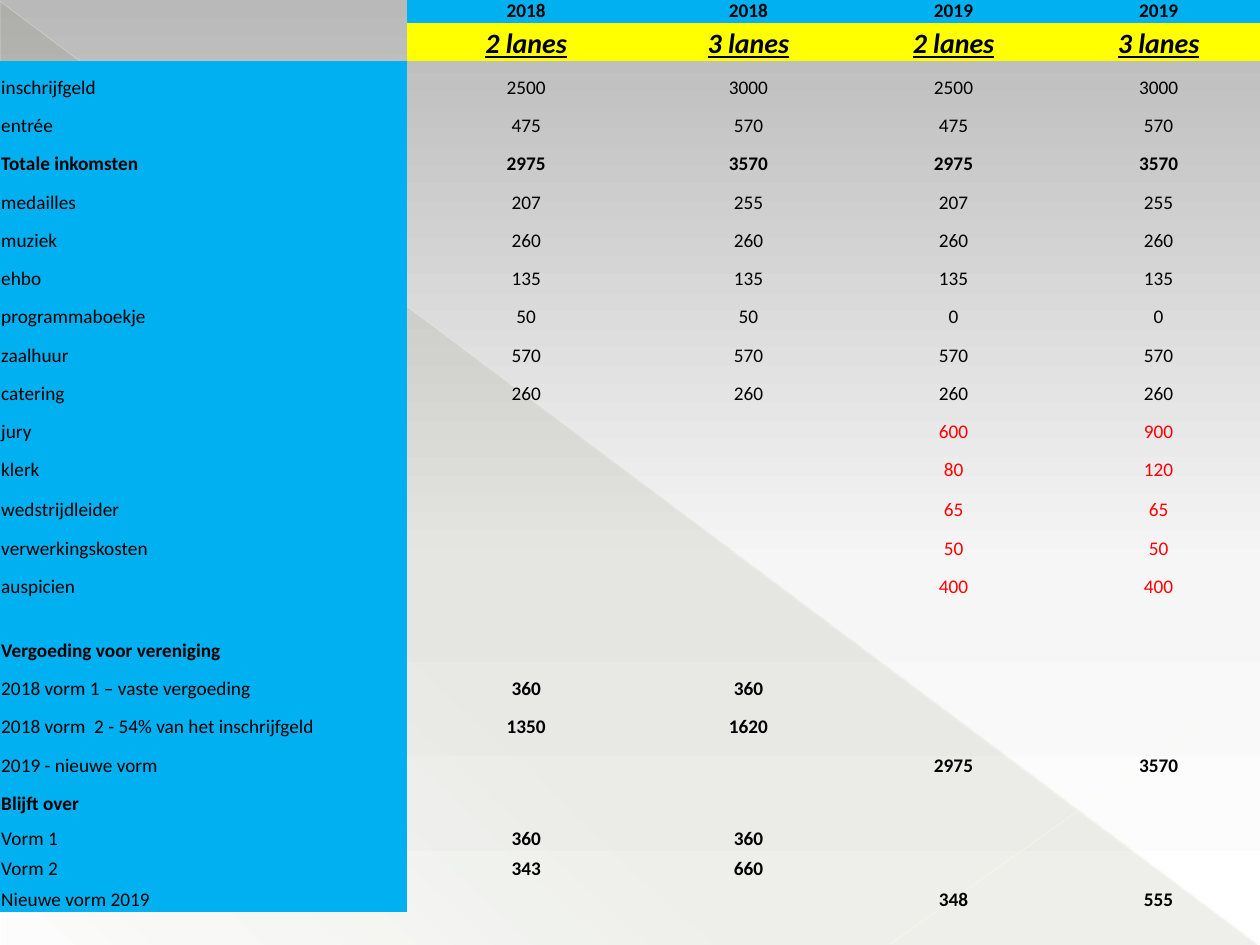
"""Build a one-slide budget table comparing 2018 and 2019 over two or three lanes."""
import pptx
import pptx.dml.color
import pptx.enum.shapes
import pptx.enum.text
import pptx.oxml.ns
import pptx.util
from lxml import etree

THEME = {
    "font": "Calibri", "body": 11, "lanes": 16,
    "text": "000000", "new": "FF0000", "label": "00B0F0", "highlight": "FFFF00",
    "background": [(0, "B9B9B9", 100), (60, "F6F6F6", 100), (100, "FFFFFF", 100)],
    "shade": [(0, "444D26", 10), (70, "444D26", 8), (100, "444D26", 1)],
    "no_grid": "{2D5ABB26-0587-4C30-8999-92F81FD0307C}",
}
STYLES = {
    "plain": {},
    "bold": {"bold": True},
    "new": {"color": THEME["new"]},
    "lanes": {"bold": True, "italic": True, "underline": True, "size": THEME["lanes"]},
}
HEADERS = [
    (["", "2018", "2018", "2019", "2019"], "bold", THEME["label"]),
    (["", "2 lanes", "3 lanes", "2 lanes", "3 lanes"], "lanes", THEME["highlight"]),
]
BODY = [
    ("inschrijfgeld", "plain", ["2500", "3000", "2500", "3000"], "plain"),
    ("entrée", "plain", ["475", "570", "475", "570"], "plain"),
    ("Totale inkomsten", "bold", ["2975", "3570", "2975", "3570"], "bold"),
    ("medailles", "plain", ["207", "255", "207", "255"], "plain"),
    ("muziek", "plain", ["260", "260", "260", "260"], "plain"),
    ("ehbo", "plain", ["135", "135", "135", "135"], "plain"),
    ("programmaboekje", "plain", ["50", "50", "0", "0"], "plain"),
    ("zaalhuur", "plain", ["570", "570", "570", "570"], "plain"),
    ("catering", "plain", ["260", "260", "260", "260"], "plain"),
    ("jury", "plain", ["", "", "600", "900"], "new"),
    ("klerk", "plain", ["", "", "80", "120"], "new"),
    ("wedstrijdleider", "plain", ["", "", "65", "65"], "new"),
    ("verwerkingskosten", "plain", ["", "", "50", "50"], "new"),
    ("auspicien", "plain", ["", "", "400", "400"], "new"),
    ("", "plain", ["", "", "", ""], "plain"),
    ("Vergoeding voor vereniging", "bold", ["", "", "", ""], "plain"),
    ("2018 vorm 1 – vaste vergoeding", "plain", ["360", "360", "", ""], "bold"),
    ("2018 vorm  2 - 54% van het inschrijfgeld", "plain", ["1350", "1620", "", ""], "bold"),
    ("2019 - nieuwe vorm", "plain", ["", "", "2975", "3570"], "bold"),
    ("Blijft over", "bold", ["", "", "", ""], "plain"),
    ("Vorm 1", "plain", ["360", "360", "", ""], "bold"),
    ("Vorm 2", "plain", ["343", "660", "", ""], "bold"),
    ("Nieuwe vorm 2019", "plain", ["", "", "348", "555"], "bold"),
]
COLUMN_WIDTHS = [232.3, 136.8, 117.2, 117.2, 117.2]
ROW_HEIGHT = 21.86
SPECIAL_HEIGHTS = {13: 22.86, 16: 14.76, 22: 20, 23: 17.2, 24: 17.7}
TABLE_TOP = -8.6
DIAGONALS = [
    ((0, 0.7), (719.3, 539.3), "FFFDE3", 0.39, 35),
    ((720, 389.5), (509, 539.3), "FFFDE6", 0.47, 45),
]

Pt = pptx.util.Pt
qn = pptx.oxml.ns.qn


def rgb(value):
    return pptx.dml.color.RGBColor.from_string(value)


def add_alpha(color_element, percent):
    etree.SubElement(color_element, qn("a:alpha"), val=str(percent * 1000))


def paint_gradient(fill, holder, stops, angle):
    fill.gradient()
    gradient = next(holder.iter(qn("a:gradFill")))
    stop_list = gradient.find(qn("a:gsLst"))
    for old_stop in list(stop_list):
        stop_list.remove(old_stop)
    for position, color, opacity in stops:
        stop = etree.SubElement(stop_list, qn("a:gs"), pos=str(position * 1000))
        color_element = etree.SubElement(stop, qn("a:srgbClr"), val=color)
        if opacity < 100:
            add_alpha(color_element, opacity)
    gradient.find(qn("a:lin")).set("ang", str(angle * 60000))


def write_text(cell, text, align="LEFT", size=THEME["body"], color=THEME["text"],
               bold=False, italic=False, underline=False):
    cell.margin_left = cell.margin_top = cell.margin_right = Pt(0.72)
    cell.margin_bottom = 0
    cell.vertical_anchor = pptx.enum.text.MSO_ANCHOR.BOTTOM
    para = cell.text_frame.paragraphs[0]
    para.alignment = getattr(pptx.enum.text.PP_ALIGN, align)
    if not text:
        etree.SubElement(para._p, qn("a:endParaRPr"), sz=str(size * 100))
        return
    span = para.add_run()
    span.text = text
    font = span.font
    font.name, font.size = THEME["font"], Pt(size)
    font.bold, font.italic, font.underline = bold, italic, underline
    font.color.rgb = rgb(color)


def fill_cell(cell, color):
    if color:
        cell.fill.solid()
        cell.fill.fore_color.rgb = rgb(color)
    else:
        cell.fill.background()


def add_backdrop(page):
    paint_gradient(page.background.fill, page.element, THEME["background"], 90)
    triangle = page.shapes.add_shape(
        pptx.enum.shapes.MSO_SHAPE.RIGHT_TRIANGLE, Pt(0.7), Pt(1.4), Pt(718.6), Pt(538.6))
    triangle.shadow.inherit = False
    triangle.line.fill.background()
    paint_gradient(triangle.fill, triangle.element, THEME["shade"], 133)
    for start, end, color, width, opacity in DIAGONALS:
        line = page.shapes.add_connector(
            pptx.enum.shapes.MSO_CONNECTOR.STRAIGHT, *map(Pt, start + end))
        line.line.width = Pt(width)
        line.line.color.rgb = rgb(color)
        add_alpha(next(line.element.iter(qn("a:srgbClr"))), opacity)
        etree.SubElement(line.element.spPr, qn("a:effectLst"))


def add_budget(page):
    row_count = len(HEADERS) + len(BODY)
    heights = [SPECIAL_HEIGHTS.get(index, ROW_HEIGHT) for index in range(row_count)]
    frame = page.shapes.add_table(row_count, len(COLUMN_WIDTHS), 0, Pt(TABLE_TOP),
                                  Pt(sum(COLUMN_WIDTHS)), Pt(sum(heights)))
    table = frame.table
    table.first_row = table.horz_banding = False
    next(frame.element.iter(qn("a:tableStyleId"))).text = THEME["no_grid"]
    for column, width in zip(table.columns, COLUMN_WIDTHS):
        column.width = Pt(width)
    for row, height in zip(table.rows, heights):
        row.height = Pt(height)

    for row, (texts, style, color) in zip(table.rows, HEADERS):
        for cell, text in zip(row.cells, texts):
            write_text(cell, text, align="CENTER", **STYLES[style])
            fill_cell(cell, color if text else None)
    for row, (label, label_style, values, value_style) in zip(list(table.rows)[len(HEADERS):], BODY):
        label_cell, *value_cells = row.cells
        write_text(label_cell, label, **STYLES[label_style])
        fill_cell(label_cell, THEME["label"])
        for cell, value in zip(value_cells, values):
            write_text(cell, value, align="CENTER", **STYLES[value_style])
            fill_cell(cell, None)


def main():
    deck = pptx.Presentation()
    deck.slide_width, deck.slide_height = Pt(720), Pt(540)
    page = deck.slides.add_slide(deck.slide_layouts.get_by_name("Blank"))
    add_backdrop(page)
    add_budget(page)
    deck.save("out.pptx")


if __name__ == "__main__":
    main()
